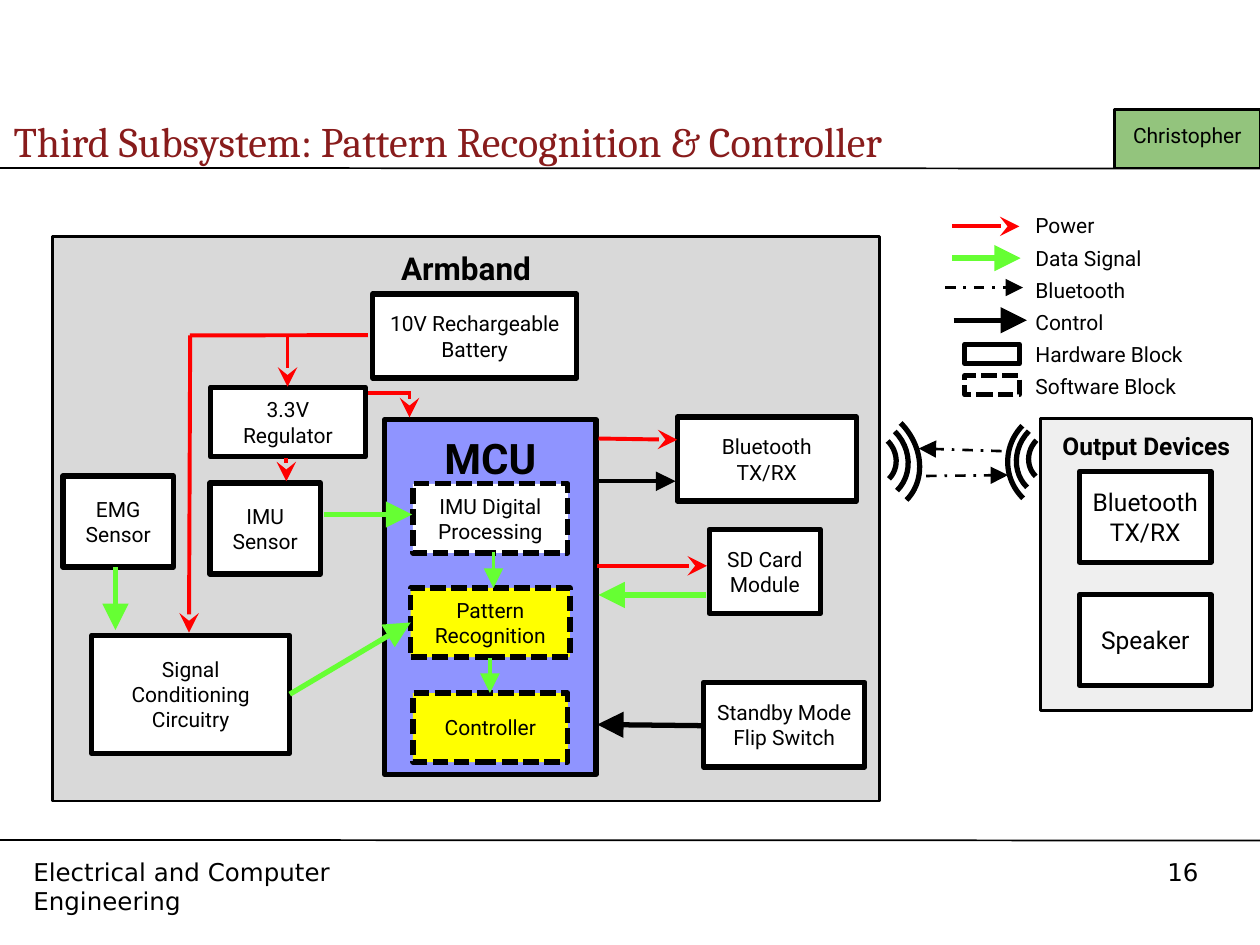
import pptx
import pptx.dml.color
import pptx.enum.dml
import pptx.enum.shapes
import pptx.enum.text
import pptx.oxml.ns
import pptx.util
from lxml import etree

Pt = pptx.util.Pt
Shape = pptx.enum.shapes.MSO_SHAPE
Dash = pptx.enum.dml.MSO_LINE
Align = pptx.enum.text.PP_ALIGN
Anchor = pptx.enum.text.MSO_ANCHOR

BLACK, WHITE, GREY, BLUE = "000000", "FFFFFF", "D9D9D9", "8F94FF"
RED, GREEN, YELLOW = "FF0000", "66FF33", "FFFF00"


def color(code):
    return pptx.dml.color.RGBColor.from_string(code)


class Page:
    """Draws styled blocks, arrows and text on one slide."""

    font = "Roboto"
    inset = 7.2

    def __init__(self, slide):
        self.shapes = slide.shapes

    def stroke(self, line, code, width, dash=None):
        line.color.rgb = color(code)
        line.width = Pt(width)
        if dash:
            line.dash_style = dash

    def letter(self, shape, lines, size, bold=False, align=Align.CENTER,
               anchor=Anchor.TOP, font=None, code=BLACK, after=0, pad=None):
        frame = shape.text_frame
        frame.word_wrap = True
        frame.vertical_anchor = anchor
        frame.margin_left = frame.margin_right = Pt(self.inset)
        frame.margin_top = frame.margin_bottom = Pt(pad or self.inset)
        frame.text = "\n".join(lines)
        for para in frame.paragraphs:
            para.alignment = align
            para.space_after = Pt(after)
            para.font.name = font or self.font
            para.font.size = Pt(size)
            para.font.bold = bold
            para.font.color.rgb = color(code)

    def block(self, place, text="", size=12, fill=WHITE, width=3, dash=None,
              bold=False, anchor=Anchor.MIDDLE):
        box = self.shapes.add_shape(Shape.RECTANGLE, *map(Pt, place))
        box.shadow.inherit = False
        box.fill.solid()
        box.fill.fore_color.rgb = color(fill)
        self.stroke(box.line, BLACK, width, dash)
        if text:
            self.letter(box, [text], size, bold, anchor=anchor)

    def panel(self, place, text, size, fill, width=1.5, bold=True):
        self.block(place, text, size, fill, width, None, bold, Anchor.TOP)

    def label(self, place, lines, size, **style):
        box = self.shapes.add_textbox(*map(Pt, place))
        self.letter(box, lines, size, align=Align.LEFT, **style)

    def arrow(self, ends, code=BLACK, width=3, head="triangle", dash=None):
        link = self.shapes.add_connector(
            pptx.enum.shapes.MSO_CONNECTOR.STRAIGHT, *map(Pt, ends))
        self.stroke(link.line, code, width, dash)
        frame = link._element.spPr
        if head:
            tip = etree.SubElement(frame.find(pptx.oxml.ns.qn("a:ln")),
                                   pptx.oxml.ns.qn("a:tailEnd"))
            for key, value in (("type", head), ("w", "lg"), ("len", "lg")):
                tip.set(key, value)
        etree.SubElement(frame, pptx.oxml.ns.qn("a:effectLst"))

    def power(self, ends, head="stealth"):
        self.arrow(ends, RED, 2.25, head)

    def radio(self, ends):
        self.arrow(ends, BLACK, 1.5, dash=Dash.DASH_DOT)

    def waves(self, places, turn):
        for place in places:
            arc = self.shapes.add_shape(Shape.ARC, *map(Pt, place))
            arc.shadow.inherit = False
            arc.fill.background()
            arc.rotation = turn
            self.stroke(arc.line, BLACK, 3)


def main():
    deck = pptx.Presentation()
    deck.slide_width, deck.slide_height = Pt(720), Pt(540)
    page = Page(deck.slides.add_slide(deck.slide_layouts[6]))

    for ends in ((0, 96, 720, 96.3), (0, 480, 720, 480.3)):
        page.arrow(ends, width=1, head=None)
    foot = dict(font="DejaVu Sans", pad=3.6)
    page.label((660, 486, 48, 24.5), ["16"], 14, **foot)
    page.label((12, 486, 230, 24), ["Electrical and Computer Engineering"],
               14, **foot)
    page.label((0.7, 34.5, 648, 67.7),
               ["Third Subsystem: Pattern Recognition & Controller"], 24,
               anchor=Anchor.BOTTOM, font="Cambria", code="881C1C")
    page.panel((637, 62.7, 83, 33.3), "Christopher", 12, "93C47D", bold=False)

    page.panel((594.5, 239, 121, 167), "Output Devices", 14, "EFEFEF")
    for top, text in ((269.3, "Bluetooth TX/RX"), (339.8, "Speaker")):
        page.block((617, top, 75, 52), text, 14)

    page.panel((30.2, 135.3, 472.3, 322.5), "Armband", 18, GREY)
    for place, text in (
            ((387, 238.3, 102.3, 48), "Bluetooth TX/RX"),
            ((36, 272, 63.2, 52), "EMG Sensor"),
            ((120, 276, 63.2, 52), "IMU Sensor"),
            ((213, 168, 116.6, 48), "10V Rechargeable Battery"),
            ((52.5, 363, 113, 67.5), "Signal Conditioning Circuitry"),
            ((405.3, 302.5, 63.5, 48), "SD Card Module"),
            ((120.3, 221.3, 88.5, 39.8), "3.3V Regulator"),
            ((402, 390, 92.2, 48.3), "Standby Mode Flip Switch")):
        page.block(place, text)
    page.panel((219.8, 239.8, 120.8, 202.7), "MCU", 24, BLUE, 3)
    for place, text, fill in (
            ((236, 276.5, 88.5, 39.5), "IMU Digital Processing", WHITE),
            ((234.7, 336, 91, 39.5), "Pattern Recognition", YELLOW),
            ((236, 396, 88.5, 39.5), "Controller", YELLOW)):
        page.block(place, text, fill=fill, dash=Dash.SQUARE_DOT)

    page.waves(((460.8, 233.3, 67, 57.6), (481, 247.7, 31.7, 29.5),
                (470.2, 239.8, 49.7, 46)), 45)
    page.waves(((576, 234, 58.3, 59), (588.3, 246.2, 28, 30.2),
                (581.8, 237.6, 43.2, 47.5)), 224)

    for ends in ((108.7, 191.7, 108, 361.5), (164.3, 191.5, 164.3, 221),
                 (163.6, 262, 163.6, 275), (234, 224, 234, 238.5),
                 (342, 250.6, 387, 251.3), (341.3, 323.3, 404, 323.3)):
        page.power(ends)
    for ends in ((210.2, 191.5, 108.5, 191.7), (234.7, 224.6, 210.2, 224.6)):
        page.power(ends, None)
    for ends in ((66, 324, 66, 360), (185, 294, 235.5, 294),
                 (165.6, 396.7, 234.7, 355.7), (403.2, 340, 342, 340)):
        page.arrow(ends, GREEN)
    for ends in ((282, 315.5, 282, 336), (280, 376, 280, 396)):
        page.arrow(ends, GREEN, 2.25)
    page.arrow((340.6, 275, 386, 275), width=2.25)
    page.arrow((402, 414.7, 341.3, 414))
    for ends in ((529.2, 272, 576, 271.5), (572.4, 257.8, 525, 256.3)):
        page.radio(ends)

    page.label((584.6, 114.5, 125.3, 116),
               ["Power", "Data Signal", "Bluetooth", "Control",
                "Hardware Block", "Software Block"], 12, after=4)
    page.power((544.3, 129.4, 582.5, 129.4))
    page.arrow((544.3, 147.5, 583.2, 147.5), GREEN)
    page.radio((540, 164.3, 584.6, 164.3))
    page.arrow((545, 183, 586.8, 183))
    for top, dash in ((196.8, None), (214.6, Dash.SQUARE_DOT)):
        page.block((551.3, top, 31.2, 11), dash=dash)

    deck.save("out.pptx")


if __name__ == "__main__":
    main()
